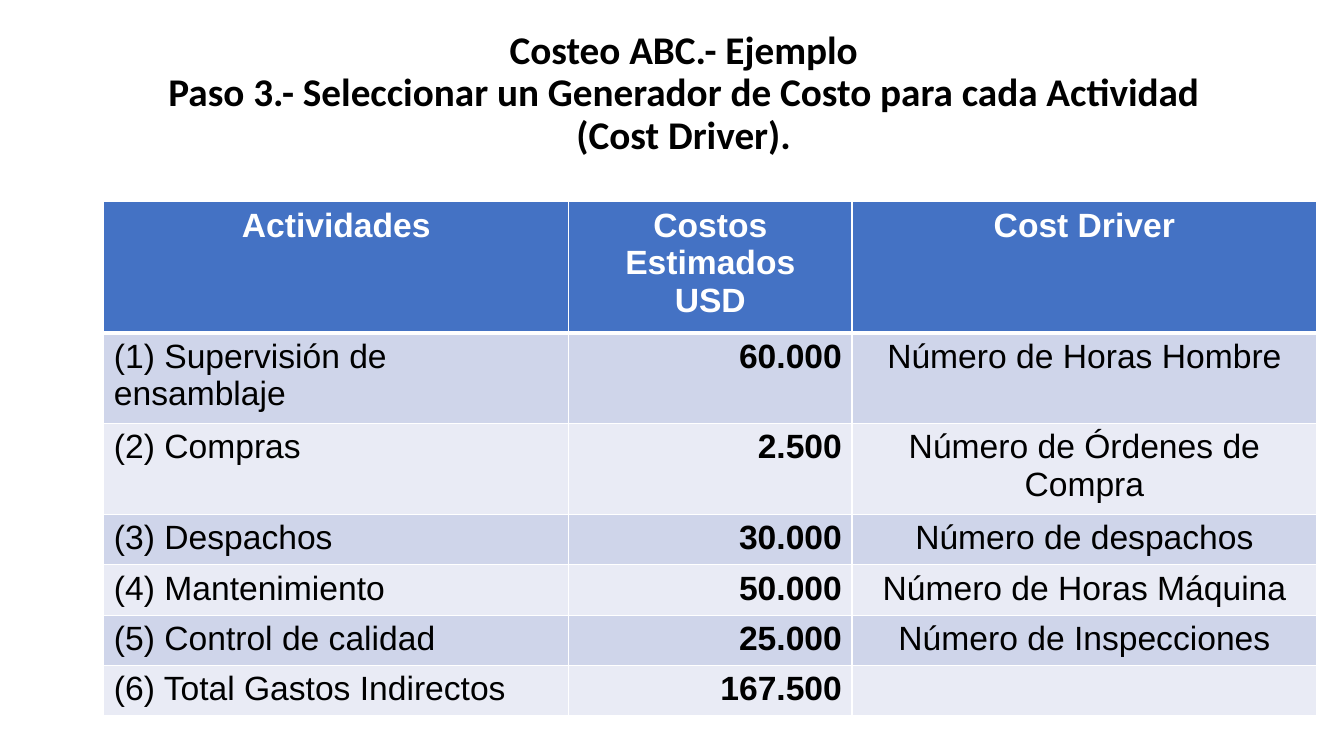
from dataclasses import dataclass

from lxml import etree
from pptx import Presentation
from pptx.dml.color import RGBColor
from pptx.enum.text import MSO_ANCHOR, PP_ALIGN
from pptx.oxml.ns import qn
from pptx.util import Emu, Inches, Pt

LEFT, CENTER, RIGHT = PP_ALIGN.LEFT, PP_ALIGN.CENTER, PP_ALIGN.RIGHT
MIDDLE = MSO_ANCHOR.MIDDLE

COLORS = {
    "white": "FFFFFF",
    "black": "000000",
    "header": "4472C4",
    "odd_row": "CFD5EA",
    "even_row": "E9EBF5",
}
SLIDE_WIDTH, SLIDE_HEIGHT = Inches(13.33), Inches(7.5)

# Percentages of the slide's width and height
MARGIN = 7.73
TITLE_TOP, TITLE_WIDTH, TITLE_HEIGHT = 5.6, 86.27, 13.73
TABLE_TOP, ROW_HEIGHT = 26.67, 5.47


@dataclass
class Column:
    width: float
    alignment: PP_ALIGN
    bold: bool


@dataclass
class Activity:
    name: str
    cost: str
    driver: str


COLUMNS = [
    Column(34.58, LEFT, False),
    Column(21.08, RIGHT, True),
    Column(34.58, CENTER, False),
]
HEADINGS = ["Actividades", "Costos Estimados\nUSD", "Cost Driver"]
ACTIVITIES = [
    Activity("(1) Supervisión de ensamblaje", "60.000", "Número de Horas Hombre"),
    Activity("(2) Compras", "2.500", "Número de Órdenes de Compra"),
    Activity("(3) Despachos", "30.000", "Número de despachos"),
    Activity("(4) Mantenimiento", "50.000", "Número de Horas Máquina"),
    Activity("(5) Control de calidad", "25.000", "Número de Inspecciones"),
    Activity("(6) Total Gastos Indirectos", "167.500", ""),
]


def across(percent: float) -> Emu:
    return Emu(round(SLIDE_WIDTH * percent / 100))


def down(percent: float) -> Emu:
    return Emu(round(SLIDE_HEIGHT * percent / 100))


def color(name: str) -> RGBColor:
    return RGBColor.from_string(COLORS[name])


def format_text(text_frame, font_name: str, size: float, color_name: str,
                bold: bool, alignment: PP_ALIGN) -> None:
    for paragraph in text_frame.paragraphs:
        paragraph.alignment = alignment
        for run in paragraph.runs:
            run.font.name = font_name
            run.font.size = Pt(size)
            run.font.bold = bold
            run.font.color.rgb = color(color_name)


def add_borders(cell, top: float, bottom: float) -> None:
    properties = cell._tc.get_or_add_tcPr()
    widths = {"a:lnL": 1, "a:lnR": 1, "a:lnT": top, "a:lnB": bottom}
    for position, (tag, width) in enumerate(widths.items()):
        line = etree.Element(qn(tag), w=str(Pt(width)))
        fill = etree.SubElement(line, qn("a:solidFill"))
        etree.SubElement(fill, qn("a:srgbClr"), val=COLORS["white"])
        properties.insert(position, line)


def add_title(slide) -> None:
    title = slide.shapes.add_textbox(across(MARGIN), down(TITLE_TOP),
                                     across(TITLE_WIDTH), down(TITLE_HEIGHT))
    text_frame = title.text_frame
    text_frame.word_wrap = True
    text_frame.vertical_anchor = MIDDLE
    text_frame.text = ("Costeo ABC.- Ejemplo\v"
                       "Paso 3.- Seleccionar un Generador de Costo para cada Actividad\v"
                       "(Cost Driver).")
    text_frame.paragraphs[0].line_spacing = 0.9
    format_text(text_frame, "Calibri", 28, "black", True, CENTER)


def add_cost_table(slide) -> None:
    rows = [HEADINGS] + [[item.name, item.cost, item.driver] for item in ACTIVITIES]
    table_width = sum(column.width for column in COLUMNS)
    table = slide.shapes.add_table(
        len(rows), len(COLUMNS), across(MARGIN), down(TABLE_TOP),
        across(table_width), down(ROW_HEIGHT * len(rows))).table
    for table_column, column in zip(table.columns, COLUMNS):
        table_column.width = across(column.width)

    for row_index, texts in enumerate(rows):
        is_header = row_index == 0
        fill_name = "header" if is_header else "odd_row" if row_index % 2 else "even_row"
        for column_index, (text, column) in enumerate(zip(texts, COLUMNS)):
            cell = table.cell(row_index, column_index)
            cell.fill.solid()
            cell.fill.fore_color.rgb = color(fill_name)
            add_borders(cell, 3 if row_index == 1 else 1, 3 if is_header else 1)
            cell.text_frame.text = text
            format_text(cell.text_frame, "Arial", 24,
                        "white" if is_header else "black",
                        is_header or column.bold,
                        CENTER if is_header else column.alignment)


def main() -> None:
    presentation = Presentation()
    presentation.slide_width, presentation.slide_height = SLIDE_WIDTH, SLIDE_HEIGHT
    slide = presentation.slides.add_slide(presentation.slide_layouts[6])

    # Heading
    add_title(slide)

    # Activities with their costs and drivers
    add_cost_table(slide)

    presentation.save("out.pptx")


if __name__ == "__main__":
    main()
